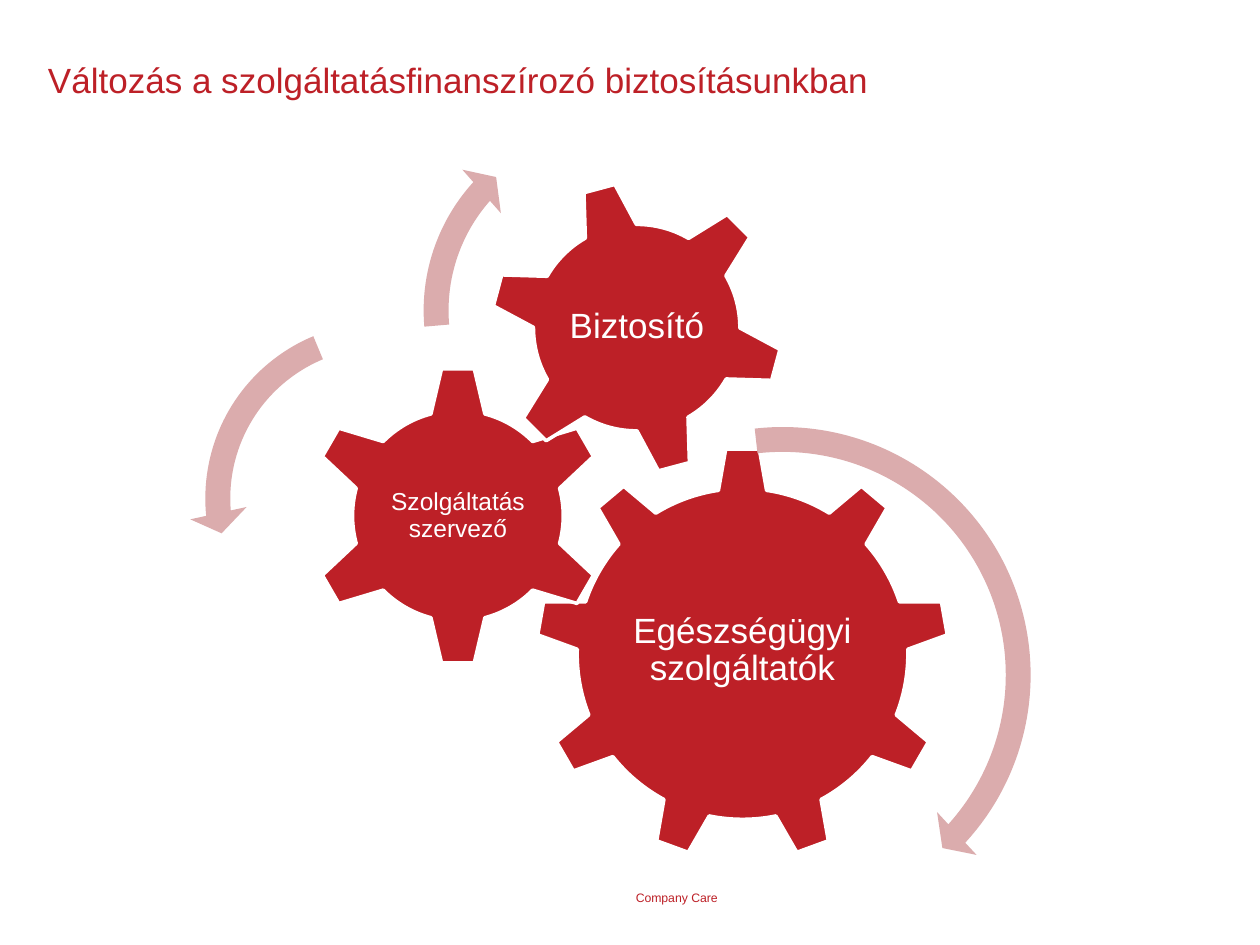
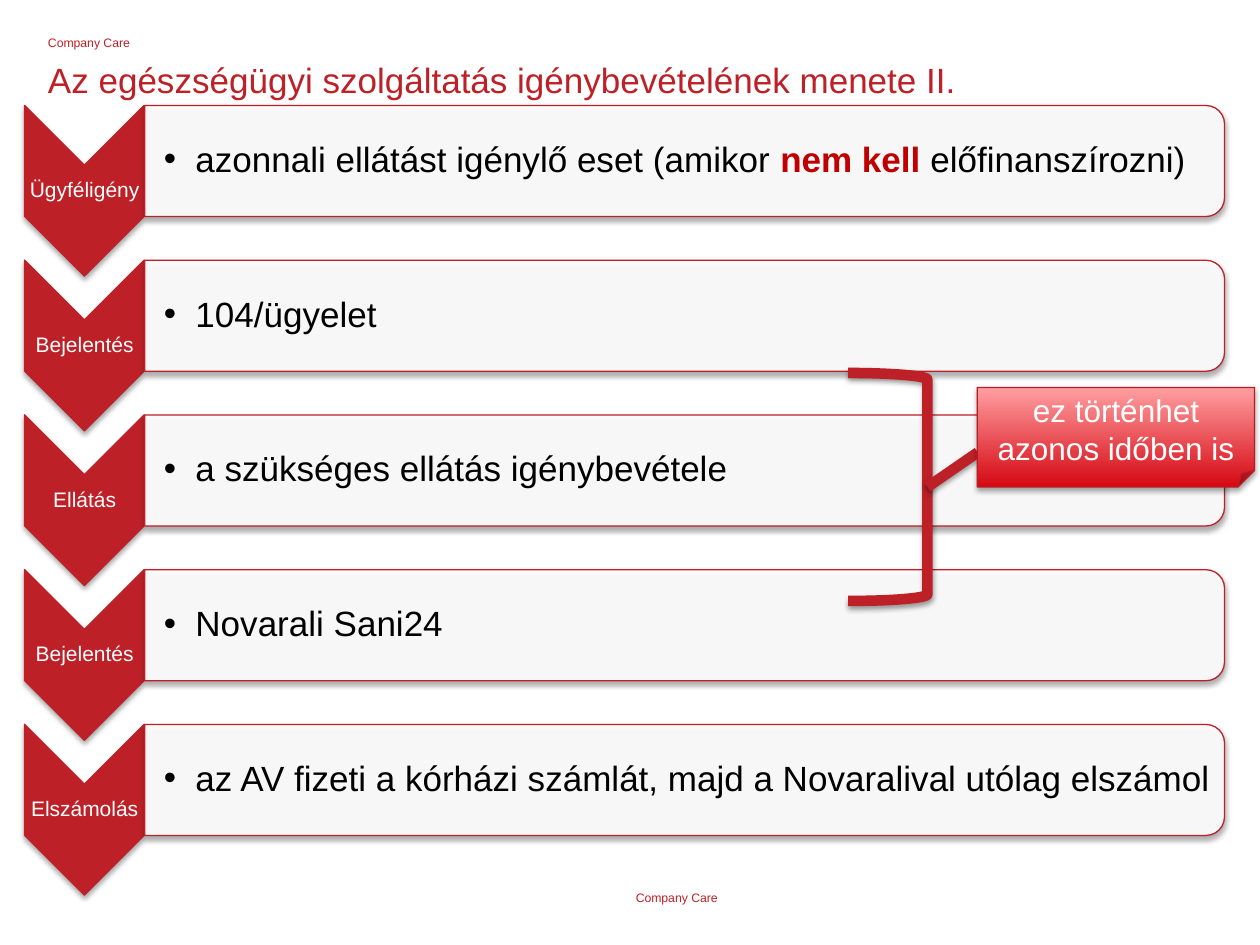
from pptx import Presentation
from pptx.dml.color import RGBColor
from pptx.enum.shapes import MSO_CONNECTOR, MSO_SHAPE as SHAPE
from pptx.enum.text import MSO_ANCHOR as ANCHOR, MSO_AUTO_SIZE, PP_ALIGN as ALIGN
from pptx.oxml import parse_xml
from pptx.oxml.ns import nsdecls
from pptx.util import Pt

RED = RGBColor(0xBD, 0x20, 0x27)
PINK = RGBColor(0xDB, 0xAC, 0xAD)
WHITE = RGBColor(0xFF, 0xFF, 0xFF)
BLACK = RGBColor(0, 0, 0)
EMPHASIS = RGBColor(0xC0, 0, 0)
NOTE_LINE = RGBColor(0xBD, 0x1B, 0x23)
NOTE_DARK = RGBColor(0xD5, 0x08, 0x12)
NOTE_LIGHT = RGBColor(0xFF, 0x9F, 0xA1)
FONT = "Arial"
BRAND = "Company Care"


def set_text(shape, text, size, color, spacing=None, align=ALIGN.LEFT,
             anchor=ANCHOR.TOP, margin=0):
    tf = shape.text_frame
    tf.text = text
    tf.word_wrap = True
    tf.auto_size = MSO_AUTO_SIZE.NONE
    tf.vertical_anchor = anchor
    tf.margin_left = tf.margin_right = tf.margin_top = tf.margin_bottom = Pt(margin)
    p = tf.paragraphs[0]
    p.alignment = align
    p.line_spacing = spacing
    p.space_before = Pt(0)
    for r in p.runs:
        r.font.name, r.font.size, r.font.color.rgb = FONT, Pt(size), color
    return p


def add_shadow(shape, alpha=35, distance=1.8):
    shape._element.spPr.append(parse_xml(
        f'<a:effectLst {nsdecls("a")}><a:outerShdw blurRad="{Pt(3.1)}" '
        f'dist="{Pt(distance)}" dir="5400000" rotWithShape="0">'
        f'<a:srgbClr val="000000"><a:alpha val="{alpha * 1000}"/></a:srgbClr>'
        '</a:outerShdw></a:effectLst>'))


prs = Presentation()
prs.slide_width, prs.slide_height = Pt(720), Pt(540)
gear_slide = prs.slides.add_slide(prs.slide_layouts[5])
step_slide = prs.slides.add_slide(prs.slide_layouts[1])

# Title and footer of both slides
for s, title in ((gear_slide, "Változás a szolgáltatásfinanszírozó biztosításunkban"),
                 (step_slide, "Az egészségügyi szolgáltatás igénybevételének menete II.")):
    sp = s.shapes.title
    sp.left, sp.top, sp.width, sp.height = Pt(27.4), Pt(35.3), Pt(660), Pt(44)
    set_text(sp, title, 20, RED, Pt(22))
    footer = s.shapes.add_textbox(Pt(363.3), Pt(508.6), Pt(228), Pt(8.6))
    set_text(footer, BRAND, 7, RED)

# Slide 1: gears (left, top, size, rotation) with labels (left, top, width, height)
s = gear_slide
gears = [
    (SHAPE.GEAR_9, 306.2, 255.6, 236.2, 0,
     "Egészségügyi szolgáltatók", 20, (353.8, 311, 141, 121.7)),
    (SHAPE.GEAR_6, 175.7, 208.8, 172, 0,
     "Szolgáltatás\vszervező", 14, (218.9, 252.5, 85.7, 85)),
    (SHAPE.GEAR_6, 279.6, 103, 168.5, 345,
     "Biztosító", 20, (316.8, 140, 94.3, 94.3)),
]
for kind, x, y, size, rotation, text, font_size, label_box in gears:
    sp = s.shapes.add_shape(kind, Pt(x), Pt(y), Pt(size), Pt(size))
    sp.rotation = rotation
    sp.shadow.inherit = False
    sp.fill.solid()
    sp.fill.fore_color.rgb = RED
    sp.line.color.rgb = WHITE
    sp.line.width = Pt(2)
    label = s.shapes.add_textbox(*map(Pt, label_box))
    set_text(label, text, font_size, WHITE, 0.9, ALIGN.CENTER, ANCHOR.MIDDLE, 1.5)

# Slide 1: direction arrows
arrows = [
    (SHAPE.CIRCULAR_ARROW, 296.1, 234.5, 302.4, (0.047, 2.99, 25.399, 158.11, 0.055)),
    (SHAPE.LEFT_CIRCULAR_ARROW, 108, 175, 219.6, (0.065, 4.3, 104.891, 148.378, 0.075)),
    (SHAPE.CIRCULAR_ARROW, 232.6, 59, 236.9, (0.06, 3.941, 133.138, 105.082, 0.07)),
]
for kind, x, y, size, adjustments in arrows:
    sp = s.shapes.add_shape(kind, Pt(x), Pt(y), Pt(size), Pt(size))
    for i, value in enumerate(adjustments):
        sp.adjustments[i] = value
    sp.shadow.inherit = False
    sp.fill.solid()
    sp.fill.fore_color.rgb = PINK
    sp.line.fill.background()

# Slide 2: small heading above the title
s = step_slide
sp = s.placeholders[1]
sp.left, sp.top, sp.width, sp.height = Pt(27.4), Pt(21.6), Pt(175), Pt(9.4)
pPr = set_text(sp, BRAND, 7, RED, Pt(7))._p.get_or_add_pPr()
pPr.set("marL", "0")
pPr.set("indent", "0")
pPr.append(parse_xml(f'<a:buNone {nsdecls("a")}/>'))

# Slide 2: process steps; text between asterisks is emphasised
steps = [
    ("Ügyféligény", "azonnali ellátást igénylő eset (amikor *nem kell *előfinanszírozni)"),
    ("Bejelentés", "104/ügyelet"),
    ("Ellátás", "a szükséges ellátás igénybevétele"),
    ("Bejelentés", "Novarali Sani24"),
    ("Elszámolás", "az AV fizeti a kórházi számlát, majd a Novaralival utólag elszámol"),
]
STEP_PITCH = 88.42
for i, (name, detail) in enumerate(steps):
    dy = i * STEP_PITCH
    chevron = s.shapes.add_shape(SHAPE.CHEVRON, Pt(-0.6), Pt(74.8 + dy), Pt(97.6), Pt(68.4))
    bar = s.shapes.add_shape(SHAPE.ROUND_2_SAME_RECTANGLE,
                             Pt(359.5), Pt(-216.5 + dy), Pt(63.4), Pt(617))
    for sp, color in ((chevron, RED), (bar, WHITE)):
        sp.rotation = 90
        sp.fill.solid()
        sp.fill.fore_color.rgb = color
        sp.line.color.rgb = RED
        sp.line.width = Pt(0.75)
        add_shadow(sp)
    bar_color = bar._element.spPr.find(".//{*}solidFill/{*}srgbClr")
    bar_color.append(parse_xml(f'<a:alpha {nsdecls("a")} val="90000"/>'))

    label = s.shapes.add_textbox(Pt(14.2), Pt(94.3 + dy), Pt(68.4), Pt(29.5))
    set_text(label, name, 12, WHITE, 0.9, ALIGN.CENTER, ANCHOR.MIDDLE, 0.6)

    box = s.shapes.add_textbox(Pt(82.2), Pt(63.5 + dy), Pt(614.2), Pt(57))
    p = set_text(box, "", 20, BLACK, 0.9, anchor=ANCHOR.MIDDLE, margin=0.6)
    box.text_frame.margin_left = Pt(11.5)
    pPr = p._p.get_or_add_pPr()
    pPr.set("marL", str(Pt(18)))
    pPr.set("indent", str(Pt(-18)))
    pPr.append(parse_xml(f'<a:buFont {nsdecls("a")} typeface="{FONT}"/>'))
    pPr.append(parse_xml(f'<a:buChar {nsdecls("a")} char="•"/>'))
    for n, part in enumerate(detail.split("*")):
        r = p.add_run()
        r.text = part
        r.font.name, r.font.size = FONT, Pt(20)
        r.font.bold = n % 2 == 1
        r.font.color.rgb = EMPHASIS if r.font.bold else BLACK

# Slide 2: bracket and its link to the note
bracket = s.shapes.add_shape(SHAPE.RIGHT_BRACKET, Pt(484.6), Pt(213.1), Pt(45.4), Pt(130.3))
bracket.fill.background()
link = s.shapes.add_connector(MSO_CONNECTOR.STRAIGHT, Pt(530), Pt(278.3), Pt(558.7), Pt(258.5))
for sp in (bracket, link):
    sp.line.color.rgb = RED
    sp.line.width = Pt(6)
    add_shadow(sp, 38, 1.6)

# Slide 2: note
note = s.shapes.add_shape(SHAPE.FOLDED_CORNER, Pt(558.5), Pt(221.4), Pt(158.4), Pt(56.9))
note.fill.gradient()
note.fill.gradient_angle = 90
for stop, color in zip(note.fill.gradient_stops, (NOTE_DARK, NOTE_LIGHT)):
    stop.color.rgb = color
note.line.color.rgb = NOTE_LINE
note.line.width = Pt(0.75)
add_shadow(note)
set_text(note, "ez történhet azonos időben is", 18, WHITE,
         align=ALIGN.CENTER, anchor=ANCHOR.MIDDLE, margin=3.6)
note.text_frame.margin_left = note.text_frame.margin_right = Pt(7.2)

prs.save("out.pptx")
